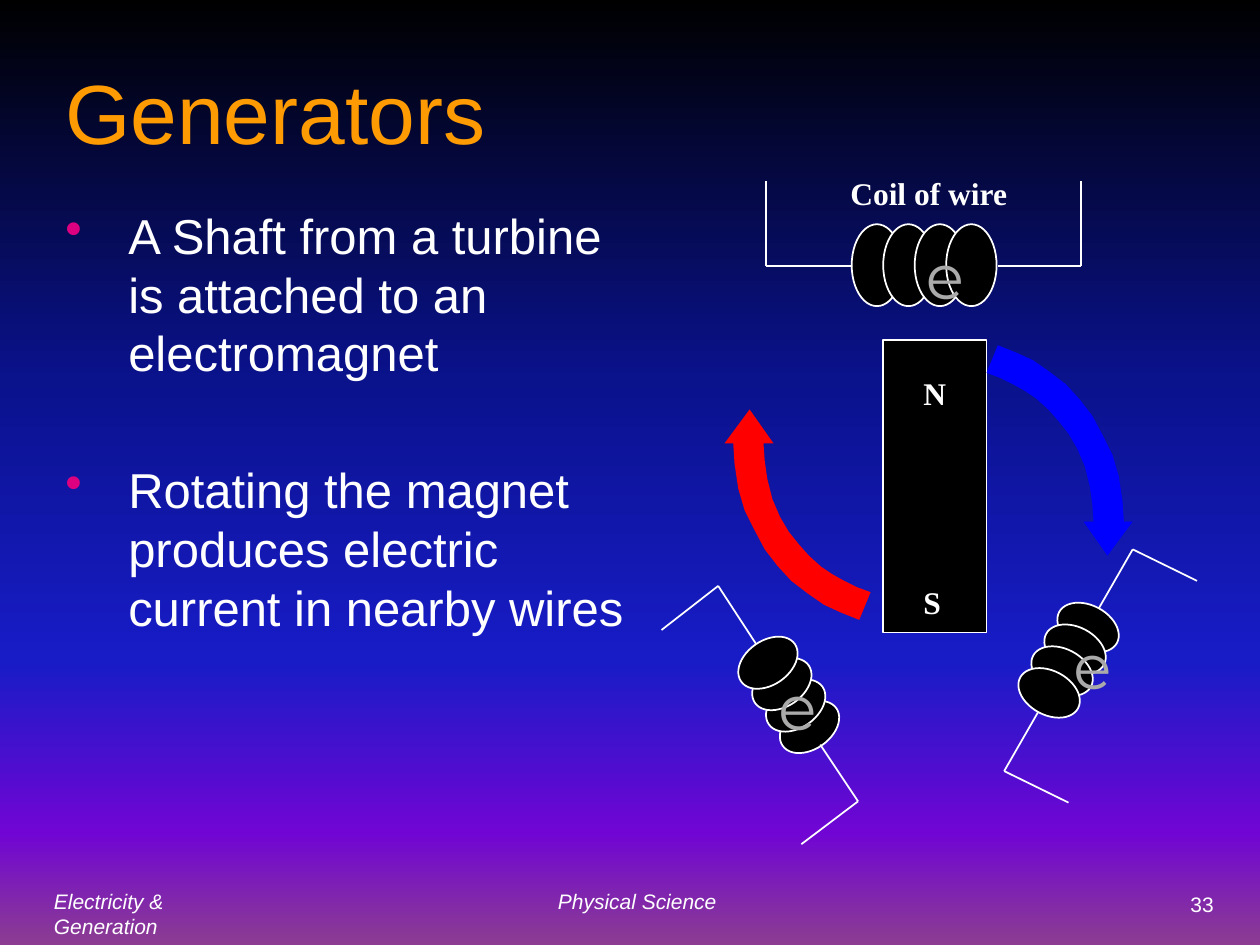
"""Build the generators slide with a turning magnet and three coils."""
from copy import deepcopy
from itertools import pairwise
from lxml.etree import SubElement
from pptx import Presentation
from pptx.dml.color import RGBColor
from pptx.enum.shapes import MSO_CONNECTOR, MSO_SHAPE
from pptx.enum.text import MSO_ANCHOR, PP_ALIGN
from pptx.oxml.ns import qn
from pptx.util import Inches, Pt

THEME = {
    "white": "FFFFFF", "black": "000000", "title": "FE9B03", "bullet": "DC0081",
    "red": "FF0000", "blue": "0000FF",
    "sky": [(0, "000000"), (40, "0A128C"), (70, "181CC7"), (88, "7005D4"), (100, "8C3D91")],
    "metal": [(0, "AAAAAA"), (100, "FFFFFF")],
    "sans": "Arial", "serif": "Times New Roman", "thin": "Montserrat",
    "head": 48, "body": 28, "label": 18, "foot": 12, "charge": 36,
}


def shade(fill, stops):
    """Give a fill a top-to-bottom gradient."""
    fill.gradient()
    fill.gradient_angle = 270
    chain = fill.gradient_stops[0]._gs.getparent()
    model = deepcopy(chain[0])
    for old in list(chain):
        chain.remove(old)
    for spot in stops:
        chain.append(deepcopy(model))
    for stop, (place, tint) in zip(fill.gradient_stops, stops):
        stop.position = place / 100
        stop.color.rgb = RGBColor.from_string(tint)


def write(box, lines, size, face="sans", tint="white", wrap=False):
    """Add a text box with one paragraph for each line."""
    frame = slide.shapes.add_textbox(*map(Inches, box)).text_frame
    frame.word_wrap = wrap
    frame.text = "\n".join(lines)
    for para in frame.paragraphs:
        font = para.runs[0].font
        font.name, font.size = THEME[face], Pt(THEME[size])
        font.color.rgb = RGBColor.from_string(THEME[tint])
    return frame


deck = Presentation()
deck.slide_width, deck.slide_height = Inches(10), Inches(7.5)
slide = deck.slides.add_slide(deck.slide_layouts[6])
shade(slide.background.fill, THEME["sky"])
white = RGBColor.from_string(THEME["white"])
black = RGBColor.from_string(THEME["black"])

for box, words, slant in [
    ((4.33, 7, 4.84, 0.3), "Physical Science", True),
    ((9.35, 7.03, 0.4, 0.3), "33", False),
    ((0.33, 7, 1.8, 0.3), "Electricity & Generation", True),
]:
    foot = write(box, [words], "foot", wrap=slant)
    foot.paragraphs[0].runs[0].font.italic = slant

title = write((0.42, 0.25, 8.5, 1.26), ["Generators"], "head", tint="title", wrap=True)
title.vertical_anchor = MSO_ANCHOR.MIDDLE

points = [
    "A Shaft from a turbine is attached to an electromagnet",
    "Rotating the magnet produces electric current in nearby wires",
]
body = write((0.42, 1.58, 4.83, 3.92), points, "body", wrap=True)
for para, gap in zip(body.paragraphs, (5.6, 44.6)):
    para.space_before = Pt(gap)
    props = para._p.get_or_add_pPr()
    props.set("marL", str(Inches(0.5)))
    props.set("indent", str(-Inches(0.5)))
    tint = SubElement(props, qn("a:buClr"))
    SubElement(tint, qn("a:srgbClr"), val=THEME["bullet"])
    SubElement(props, qn("a:buChar"), char="•")

magnet = slide.shapes.add_shape(
    MSO_SHAPE.RECTANGLE, Inches(7.01), Inches(2.7), Inches(0.82), Inches(2.32))
magnet.shadow.inherit = False
magnet.fill.solid()
magnet.fill.fore_color.rgb = black
magnet.line.color.rgb = white
magnet.line.width = Pt(1)

curve = [
    (6.82, 4.92), (6.91, 4.7), (6.8, 4.66), (6.7, 4.61), (6.61, 4.56), (6.52, 4.5),
    (6.42, 4.41), (6.34, 4.32), (6.26, 4.22), (6.19, 4.1), (6.13, 3.96), (6.09, 3.8),
    (6.07, 3.66), (6.06, 3.52), (6.14, 3.52), (5.95, 3.25), (5.75, 3.52), (5.82, 3.52),
    (5.83, 3.68), (5.86, 3.88), (5.91, 4.05), (5.99, 4.21), (6.07, 4.36), (6.17, 4.49),
    (6.28, 4.61), (6.41, 4.71), (6.54, 4.8), (6.67, 4.86),
]
turned = [(14.74 - x, 7.66 - y) for x, y in curve]
for path, tint in ((curve, "red"), (turned, "blue")):
    spots = [(Inches(x), Inches(y)) for x, y in path]
    build = slide.shapes.build_freeform(*spots[0], scale=1.0)
    build.add_line_segments(spots[1:], close=True)
    arrow = build.convert_to_shape()
    arrow.shadow.inherit = False
    arrow.fill.solid()
    arrow.fill.fore_color.rgb = RGBColor.from_string(THEME[tint])
    arrow.line.fill.background()

coils = [
    ((6.76, 1.78), (0.25, 0), (0.4, 0.65), 0,
     [[(7.92, 2.11), (8.58, 2.11), (8.58, 1.44)], [(6.75, 2.11), (6.08, 2.11), (6.08, 1.44)]]),
    ((8.46, 4.72), (-0.103, 0.173), (0.35, 0.52), 118,
     [[(8.24, 5.65), (7.97, 6.12), (8.48, 6.37)], [(8.72, 4.83), (8.99, 4.36), (9.5, 4.61)]]),
    ((6.25, 5.51), (-0.11, -0.17), (0.35, 0.52), 235,
     [[(6, 5.11), (5.7, 4.65), (5.25, 5)], [(6.51, 5.91), (6.81, 6.36), (6.36, 6.7)]]),
]
for (left, top), (across, down), size, angle, wires in coils:
    for turn in range(4):
        place = (left + turn * across, top + turn * down)
        loop = slide.shapes.add_shape(MSO_SHAPE.OVAL, *map(Inches, place + size))
        loop.rotation = angle
        loop.shadow.inherit = False
        loop.fill.solid()
        loop.fill.fore_color.rgb = black
        loop.line.color.rgb = white
        loop.line.width = Pt(1)
    for wire in wires:
        for start, end in pairwise(wire):
            lead = slide.shapes.add_connector(
                MSO_CONNECTOR.STRAIGHT, *map(Inches, start + end))
            lead.line.color.rgb = white
            lead.line.width = Pt(1)
            SubElement(lead._element.spPr, qn("a:effectLst"))

for box, words in [
    ((7.23, 2.92, 0.38, 0.4), "N"),
    ((7.23, 4.58, 0.34, 0.4), "S"),
    ((6.65, 1.33, 1.45, 0.4), "Coil of wire"),
]:
    label = write(box, [words], "label", "serif")
    label.paragraphs[0].runs[0].font.bold = True

for left, top in ((7.25, 1.83), (8.42, 4.92), (6.08, 5.25)):
    charge = write((left, top, 0.25, 0.52), ["e"], "charge", "thin")
    para = charge.paragraphs[0]
    para.alignment = PP_ALIGN.CENTER
    font = para.runs[0].font
    shade(font.fill, THEME["metal"])
    font._element.set("spc", "720")

deck.save("out.pptx")
